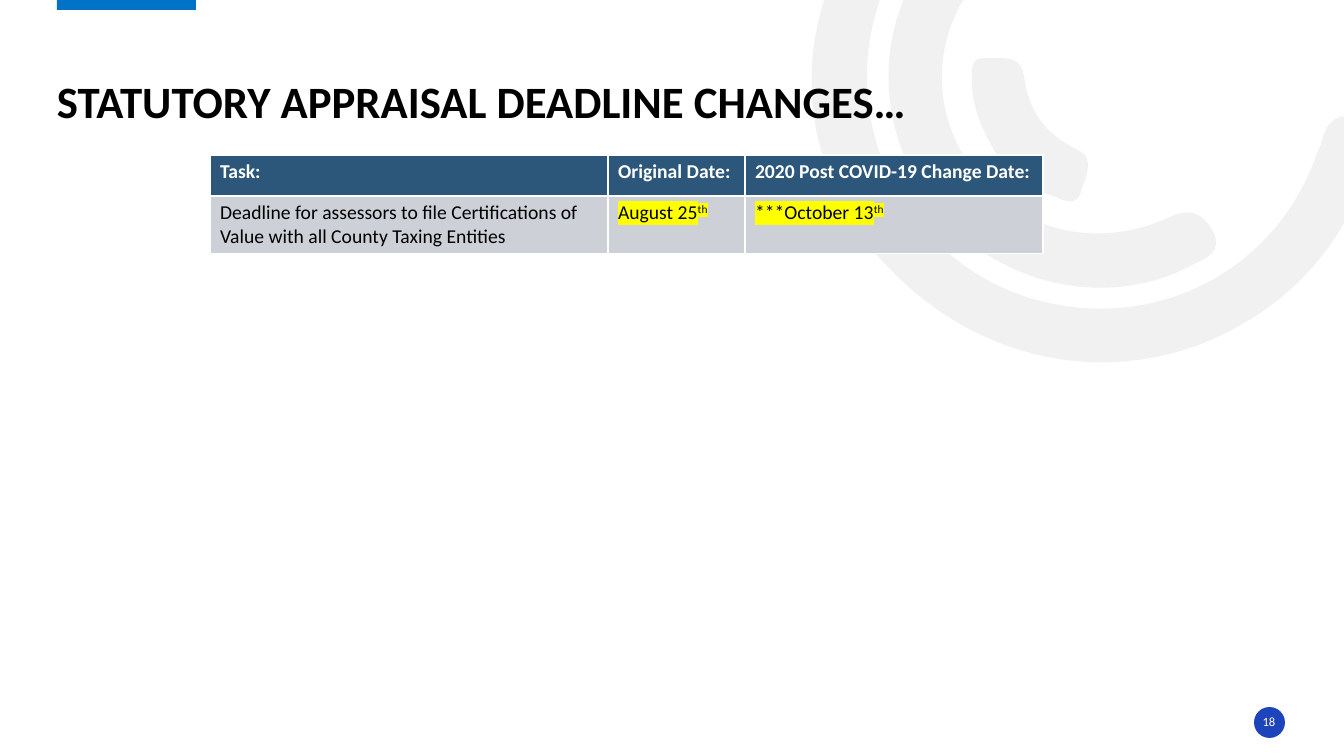
from math import cos, radians, sin

from lxml.etree import Element, SubElement
from pptx import Presentation
from pptx.dml.color import RGBColor
from pptx.enum.shapes import MSO_SHAPE as Preset
from pptx.enum.text import MSO_ANCHOR as Anchor, MSO_AUTO_SIZE as AutoSize, PP_ALIGN as Align
from pptx.oxml.ns import qn
from pptx.util import Pt

WIDTH, HEIGHT = 1344, 756
SCALE = 12192000 / WIDTH
FONT = "Calibri"
WHITE, BLACK, YELLOW = "FFFFFF", "000000", "FFFF00"
HEADER_FILL, ROW_FILL = "2C567A", "CDD1D7"
RING_ANGLE = 144.2

# Each ring: a start point, then cubic curves as (control, control, end).
OUTER_RING = (858, 231), [
    ((805, 150), (793, 50), (845, -50)),
    ((897, -153), (984, -205), (1099, -209)),
    ((1114, -209), (1130, -212), (1140, -197)),
    ((1153, -176), (1136, -155), (1107, -155)),
    ((975, -155), (872, -59), (867, 69)),
    ((863, 182), (943, 283), (1054, 304)),
    ((1169, 327), (1280, 263), (1317, 153)),
    ((1319, 149), (1321, 145), (1322, 141)),
    ((1327, 120), (1338, 112), (1360, 118)),
    ((1384, 125), (1378, 142), (1372, 157)),
    ((1345, 247), (1288, 309), (1201, 344)),
    ((1079, 390), (943, 348), (858, 231)),
]
MIDDLE_RING = (929, 201), [
    ((869, 116), (876, 7), (948, -69)),
    ((959, -80), (970, -96), (988, -79)),
    ((1003, -65), (1005, -50), (987, -32)),
    ((932, 26), (927, 109), (973, 169)),
    ((1016, 231), (1097, 251), (1170, 217)),
    ((1191, 207), (1203, 214), (1213, 231)),
    ((1223, 252), (1207, 258), (1192, 265)),
    ((1105, 312), (991, 284), (929, 201)),
]
INNER_RING = (995, 152), [
    ((983, 131), (972, 108), (972, 83)),
    ((972, 74), (969, 57), (984, 58)),
    ((1000, 59), (1021, 53), (1024, 77)),
    ((1029, 111), (1044, 133), (1076, 149)),
    ((1097, 158), (1085, 177), (1081, 191)),
    ((1077, 208), (1063, 200), (1053, 196)),
    ((1029, 188), (1011, 171), (995, 152)),
]

COLUMNS = [398, 137, 298]
ROW_HEIGHT = 41
HEADINGS = ["Task:", "Original Date:", "2020 Post COVID-19 Change Date:"]
TASK = "Deadline for assessors to file Certifications of Value with all County Taxing Entities"
DATES = ["August 25", "***October 13"]


def px(length):
    return round(length * SCALE)


def box(*lengths):
    return [px(length) for length in lengths]


def color(hex_string):
    return RGBColor.from_string(hex_string)


def paint(shape, fill):
    """Give a shape a plain fill, with no line or shadow."""
    shape.shadow.inherit = False
    shape.fill.solid()
    shape.fill.fore_color.rgb = color(fill)
    shape.line.fill.background()


def add_run(paragraph, text, size, ink, bold=False, marked=False, raised=False):
    run = paragraph.add_run()
    run.text = text
    font = run.font
    font.size, font.bold, font.name = Pt(size), bold, FONT
    font.color.rgb = color(ink)
    properties = run._r.get_or_add_rPr()
    if marked:
        highlight = Element(qn("a:highlight"))
        SubElement(highlight, qn("a:srgbClr"), val=YELLOW)
        properties.find(qn("a:solidFill")).addnext(highlight)
    if raised:
        properties.set("baseline", "30000")


def clear_margins(frame):
    frame.margin_left = frame.margin_right = frame.margin_top = frame.margin_bottom = 0


def turn(point, degrees):
    """Rotate a point clockwise about the slide's top left corner."""
    x, y = point
    c, s = cos(radians(degrees)), sin(radians(degrees))
    return x * c - y * s, x * s + y * c


def bend_lines(outline):
    """Join every three straight segments of an outline into one cubic curve."""
    segments = list(outline.iter(qn("a:lnTo")))
    for first, second, end in zip(segments[::3], segments[1::3], segments[2::3]):
        curve = Element(qn("a:cubicBezTo"))
        first.addprevious(curve)
        for segment in (first, second, end):
            curve.append(segment[0])
            segment.getparent().remove(segment)


def add_ring(slide, start, curves):
    points = [start] + [point for curve in curves for point in curve]
    upright = [tuple(round(100 * value) for value in turn(point, -RING_ANGLE))
               for point in points]
    builder = slide.shapes.build_freeform(*upright[0], scale=SCALE / 100)
    builder.add_line_segments(upright[1:], close=True)
    ring = builder.convert_to_shape()
    bend_lines(ring._element)
    center = ring.left + ring.width / 2, ring.top + ring.height / 2
    x, y = turn(center, RING_ANGLE)
    ring.left, ring.top = round(x - ring.width / 2), round(y - ring.height / 2)
    ring.rotation = RING_ANGLE
    paint(ring, "E7E6E6")
    tint = ring._element.spPr.find(qn("a:solidFill"))[0]
    SubElement(tint, qn("a:alpha"), val="53000")


def add_preset(slide, preset, place, fill):
    paint(slide.shapes.add_shape(preset, *box(*place)), fill)


def add_page_number(slide, number):
    add_preset(slide, Preset.OVAL, (1254, 707, 31, 31), "1E44BC")
    frame = slide.shapes.add_textbox(*box(1253, 712, 32, 20)).text_frame
    frame.word_wrap = True
    frame.vertical_anchor = Anchor.MIDDLE
    clear_margins(frame)
    frame.paragraphs[0].alignment = Align.CENTER
    add_run(frame.paragraphs[0], number, 9, WHITE)


def set_title(slide, text):
    title = slide.shapes.title
    title.left, title.top, title.width, title.height = box(57, 26, 1229, 102)
    frame = title.text_frame
    frame.auto_size = AutoSize.NONE
    frame.vertical_anchor = Anchor.BOTTOM
    clear_margins(frame)
    paragraph = frame.paragraphs[0]
    paragraph.alignment = Align.LEFT
    paragraph.line_spacing = 0.9
    add_run(paragraph, text, 32, BLACK, bold=True)
    slide.shapes._spTree.append(title._element)  # in front of the rings


def start_cell(cell, fill):
    """Fill a cell and return its paragraph."""
    cell.fill.solid()
    cell.fill.fore_color.rgb = color(fill)
    return cell.text_frame.paragraphs[0]


def add_deadline_table(slide):
    frame = slide.shapes.add_table(2, len(COLUMNS), *box(210, 155, sum(COLUMNS), 98))
    table = frame.table
    for column, width in zip(table.columns, COLUMNS):
        column.width = px(width)
    for row in table.rows:
        row.height = px(ROW_HEIGHT)
    frame.height = px(98)
    for index, heading in enumerate(HEADINGS):
        add_run(start_cell(table.cell(0, index), HEADER_FILL), heading, 14, WHITE, bold=True)
    add_run(start_cell(table.cell(1, 0), ROW_FILL), TASK, 14, BLACK)
    for index, date in enumerate(DATES, start=1):
        paragraph = start_cell(table.cell(1, index), ROW_FILL)
        add_run(paragraph, date, 14, BLACK, marked=True)
        add_run(paragraph, "th", 14, BLACK, marked=True, raised=True)


def main():
    deck = Presentation()
    deck.slide_width, deck.slide_height = box(WIDTH, HEIGHT)
    slide = deck.slides.add_slide(deck.slide_layouts[5])
    for start, curves in (OUTER_RING, MIDDLE_RING, INNER_RING):
        add_ring(slide, start, curves)
    add_preset(slide, Preset.RECTANGLE, (57, -2, 139, 12), "0072C7")
    add_page_number(slide, "18")
    add_deadline_table(slide)
    set_title(slide, "STATUTORY APPRAISAL DEADLINE CHANGES…")
    deck.save("out.pptx")


if __name__ == "__main__":
    main()
